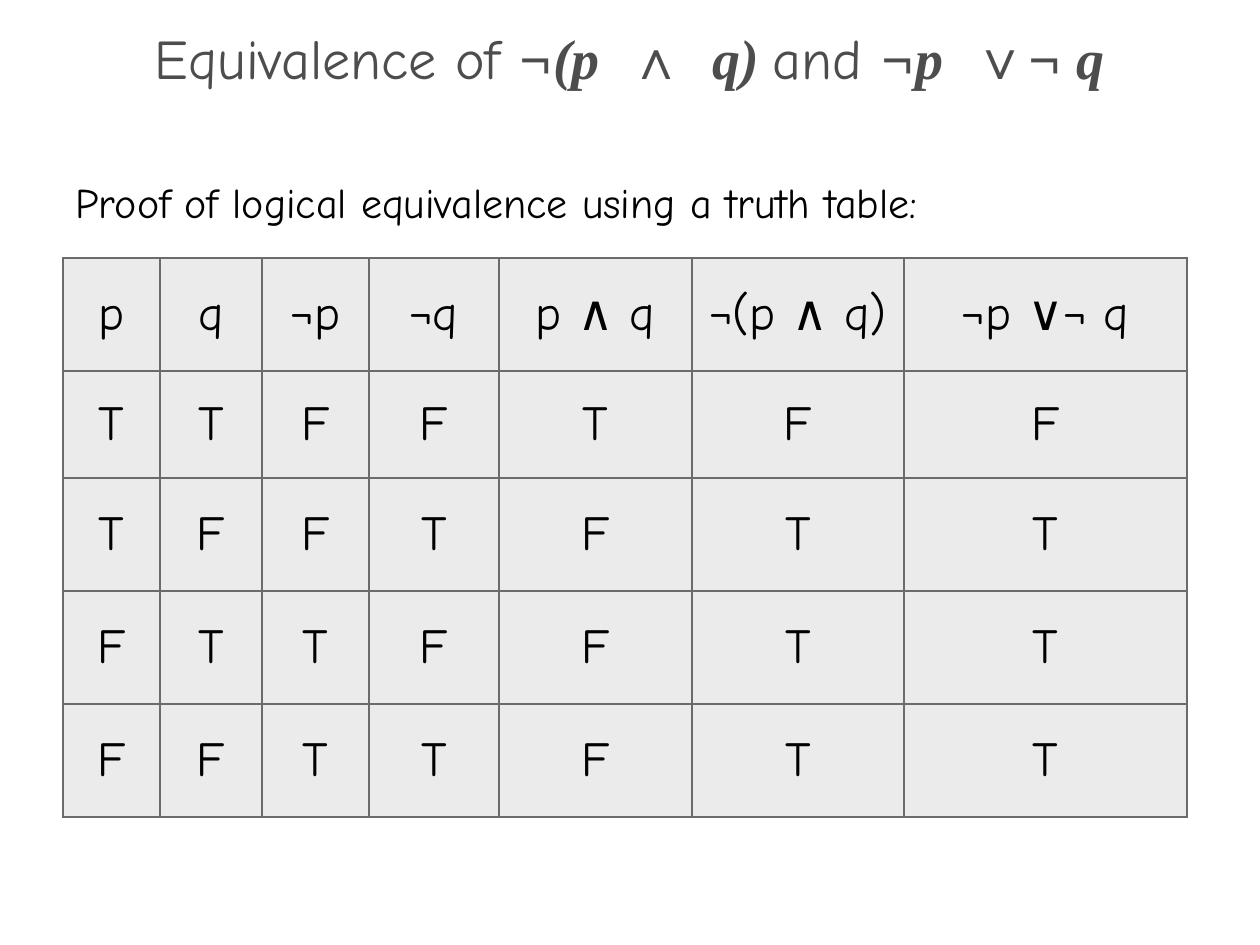
from itertools import product

from lxml.etree import SubElement
from pptx import Presentation
from pptx.dml.color import RGBColor
from pptx.enum.text import MSO_ANCHOR, PP_ALIGN
from pptx.oxml.ns import qn
from pptx.util import Emu, Pt

EMU_PER_INCH = 914400
PX_PER_INCH = 126
COLORS = {"title": "4D4D4D", "text": "000000", "cell": "EBEBEB", "border": "6B6B6B"}
BODY_FONT = "Comic Neue"
MATH_FONT = "Times New Roman"
COLUMN_WIDTHS = [97, 102, 107, 130, 193, 212, 283]
ROW_HEIGHTS = [113, 107, 113, 113, 113]
HEADINGS = ["p", "q", "¬p", "¬q", "p ∧ q", "¬(p ∧ q)", "¬p ∨¬ q"]


def px(length):
    return Emu(round(length * EMU_PER_INCH / PX_PER_INCH))


def write(paragraph, text, size, color="text", font=BODY_FONT, bold=False, italic=False):
    run = paragraph.add_run()
    run.text = text
    run.font.size = Pt(size)
    run.font.name = font
    run.font.bold = bold
    run.font.italic = italic
    run.font.color.rgb = RGBColor.from_string(COLORS[color])


def add_text_box(slide, left, top, width, height, wrap=True, anchor=MSO_ANCHOR.TOP):
    frame = slide.shapes.add_textbox(px(left), px(top), px(width), px(height)).text_frame
    frame.word_wrap = wrap
    frame.vertical_anchor = anchor
    return frame.paragraphs[0]


def add_title(slide):
    title = add_text_box(slide, 0, 34, 1260, 63, anchor=MSO_ANCHOR.MIDDLE)
    title.alignment = PP_ALIGN.CENTER
    title.line_spacing = 0.7
    math = {"font": MATH_FONT, "bold": True}
    formula = math | {"italic": True}
    for text, style in [
        ("Equivalence of ", {}),
        ("¬(p ", formula),
        (" ∧ ", math),
        (" q) ", formula),
        ("and ", {}),
        ("¬p ", formula),
        (" ∨", math | {"font": "Arial"}),
        ("¬ q", formula),
    ]:
        write(title, text, 32, color="title", **style)


def draw_borders(cell):
    properties = cell._tc.get_or_add_tcPr()
    for index, side in enumerate(("a:lnL", "a:lnR", "a:lnT", "a:lnB")):
        line = properties.makeelement(qn(side), {"w": str(Pt(1))})
        fill = SubElement(line, qn("a:solidFill"))
        SubElement(fill, qn("a:srgbClr"), val=COLORS["border"])
        properties.insert(index, line)


def fill_cell(cell, text):
    cell.vertical_anchor = MSO_ANCHOR.MIDDLE
    cell.fill.solid()
    cell.fill.fore_color.rgb = RGBColor.from_string(COLORS["cell"])
    paragraph = cell.text_frame.paragraphs[0]
    paragraph.alignment = PP_ALIGN.CENTER
    paragraph.space_before = Pt(5.6)
    write(paragraph, text, 28)
    draw_borders(cell)


def truth_rows():
    for p, q in product((True, False), repeat=2):
        values = (p, q, not p, not q, p and q, not (p and q), not p or not q)
        yield ["T" if value else "F" for value in values]


def add_truth_table(slide):
    table = slide.shapes.add_table(
        len(ROW_HEIGHTS), len(COLUMN_WIDTHS), px(63), px(258),
        px(sum(COLUMN_WIDTHS)), px(sum(ROW_HEIGHTS)),
    ).table
    for column, width in zip(table.columns, COLUMN_WIDTHS):
        column.width = px(width)
    for row, height in zip(table.rows, ROW_HEIGHTS):
        row.height = px(height)
    for row, texts in zip(table.rows, [HEADINGS, *truth_rows()]):
        for cell, text in zip(row.cells, texts):
            fill_cell(cell, text)


def main():
    presentation = Presentation()
    presentation.slide_width = px(1260)
    presentation.slide_height = px(945)
    slide = presentation.slides.add_slide(presentation.slide_layouts[6])
    add_title(slide)
    add_truth_table(slide)
    caption = add_text_box(slide, 63, 170, 905, 63, wrap=False)
    write(caption, "Proof of logical equivalence using a truth table:", 24)
    presentation.save("out.pptx")


if __name__ == "__main__":
    main()
